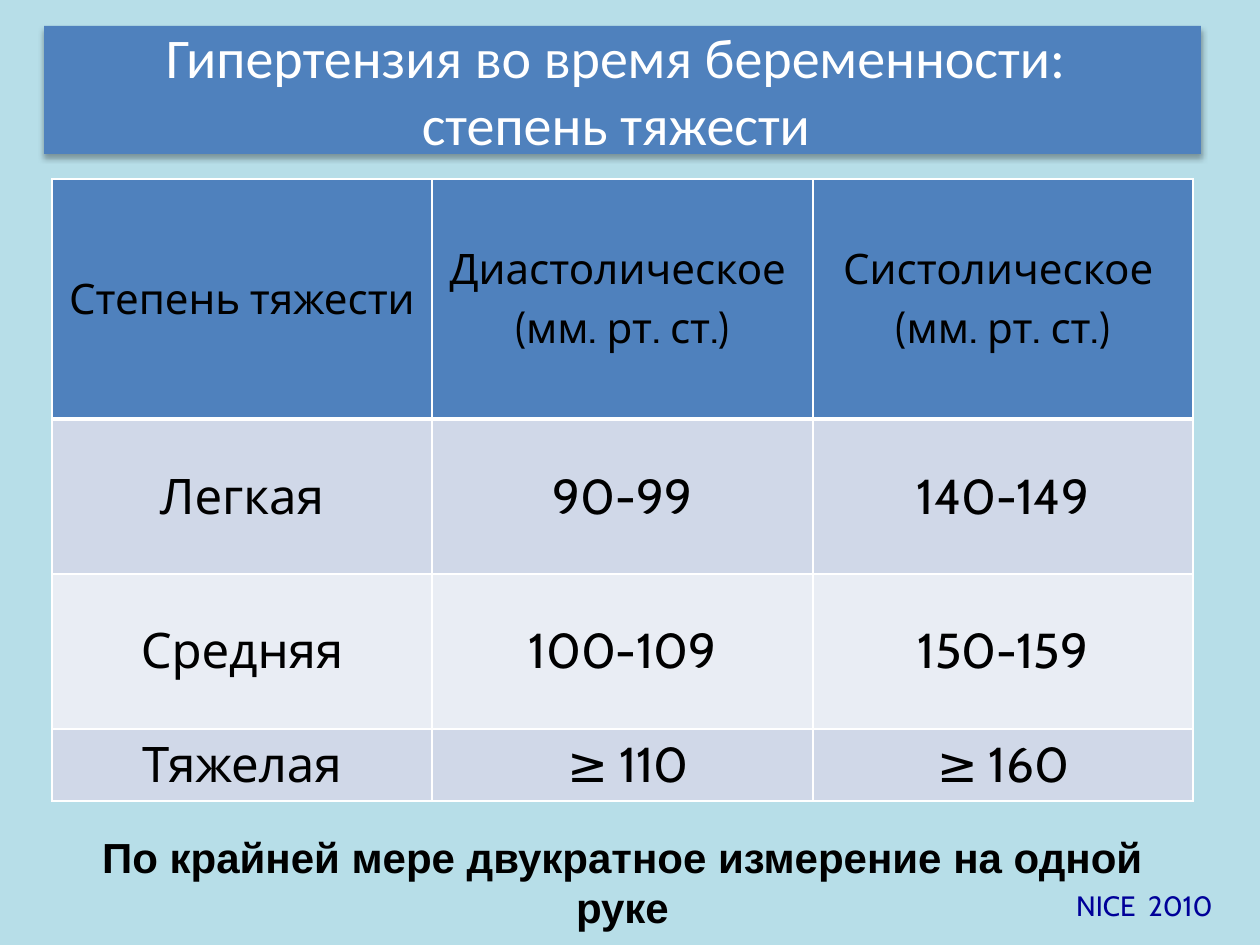
import pptx
import pptx.dml.color
import pptx.enum.text
import pptx.oxml
import pptx.oxml.ns
import pptx.util

EMU_PER_PX = 914400 / 126
ALIGN = pptx.enum.text.PP_ALIGN
ANCHOR = pptx.enum.text.MSO_ANCHOR
AUTO_SIZE = pptx.enum.text.MSO_AUTO_SIZE
NAMESPACE = pptx.oxml.ns.nsdecls("a")

BLUE, WHITE, BLACK, NAVY = "4F81BD", "FFFFFF", "000000", "000099"
SKY, BAND_DARK, BAND_LIGHT = "B7DEE8", "D0D8E8", "E9EDF4"

COLUMN_WIDTHS = [380, 381, 380]
ROW_HEIGHTS = [240, 155, 155, 72]
SEVERITY_ROWS = [
    ["Степень тяжести", "Диастолическое \n(мм. рт. ст.)", "Систолическое \n(мм. рт. ст.)"],
    ["Легкая", "90-99", "140-149"],
    ["Средняя", "100-109", "150-159"],
    ["Тяжелая", " ≥ 110", "≥ 160"],
]


def px(length):
    return pptx.util.Emu(round(length * EMU_PER_PX))


def rgb(colour):
    return pptx.dml.color.RGBColor.from_string(colour)


def fill_solid(fill, colour):
    fill.solid()
    fill.fore_color.rgb = rgb(colour)


class SeveritySlide:
    def __init__(self, presentation):
        self.slide = presentation.slides.add_slide(presentation.slide_layouts[5])
        fill_solid(self.slide.background.fill, SKY)

    def set_text(self, frame, text, size, font, colour, bold=False, align=ALIGN.CENTER):
        frame.text = text
        for paragraph in frame.paragraphs:
            paragraph.alignment = align
            for run in paragraph.runs:
                run.font.size = pptx.util.Pt(size)
                run.font.name = font
                run.font.bold = bold
                run.font.color.rgb = rgb(colour)

    def title(self, box, text):
        """Turn the title placeholder into a rounded, shadowed banner."""
        banner = self.slide.shapes.title
        banner.left, banner.top, banner.width, banner.height = map(px, box)
        properties = banner.element.spPr
        properties.append(pptx.oxml.parse_xml(
            f'<a:prstGeom {NAMESPACE} prst="roundRect"><a:avLst/></a:prstGeom>'))
        fill_solid(banner.fill, BLUE)
        banner.line.fill.background()
        properties.append(pptx.oxml.parse_xml(
            f'<a:effectLst {NAMESPACE}><a:outerShdw blurRad="44450" dist="27940" dir="5400000">'
            f'<a:srgbClr val="{BLACK}"><a:alpha val="32000"/></a:srgbClr>'
            '</a:outerShdw></a:effectLst>'))
        frame = banner.text_frame
        frame.auto_size = AUTO_SIZE.NONE
        frame.vertical_anchor = ANCHOR.MIDDLE
        self.set_text(frame, text, 32, "Calibri", WHITE)

    def text(self, box, text, size, font, colour, bold=False, align=ALIGN.CENTER, wrap=True):
        frame = self.slide.shapes.add_textbox(*map(px, box)).text_frame
        frame.word_wrap = wrap
        frame.auto_size = AUTO_SIZE.SHAPE_TO_FIT_TEXT
        self.set_text(frame, text, size, font, colour, bold, align)

    def table(self, left, top, rows):
        table = self.slide.shapes.add_table(
            len(rows), len(COLUMN_WIDTHS), px(left), px(top),
            px(sum(COLUMN_WIDTHS)), px(sum(ROW_HEIGHTS))).table
        for column, width in zip(table.columns, COLUMN_WIDTHS):
            column.width = px(width)
        for row, height in zip(table.rows, ROW_HEIGHTS):
            row.height = px(height)
        for row_index, labels in enumerate(rows):
            for column_index, label in enumerate(labels):
                self.cell(table.cell(row_index, column_index), label, row_index)

    def cell(self, cell, label, row_index):
        header = row_index == 0
        cell.vertical_anchor = ANCHOR.MIDDLE
        self.set_text(cell.text_frame, label, 24 if header else 28, "Cabin", BLACK)
        paragraphs = cell.text_frame.paragraphs
        for paragraph in paragraphs:
            properties = paragraph._p.get_or_add_pPr()
            properties.insert(0, pptx.oxml.parse_xml(
                f'<a:spcBef {NAMESPACE}><a:spcPct val="20000"/></a:spcBef>'))
            if len(paragraphs) > 1:
                properties.set("marL", "384048")
                properties.set("indent", "-384048")
        self.borders(cell, {"T": 3 if row_index == 1 else 1, "B": 3 if header else 1})
        fill_solid(cell.fill, BLUE if header else BAND_DARK if row_index % 2 else BAND_LIGHT)

    def borders(self, cell, widths):
        """Draw white borders, 1 pt wide on every side not given in widths."""
        for side in "LRTB":
            width = pptx.util.Pt(widths.get(side, 1))
            cell._tc.get_or_add_tcPr().append(pptx.oxml.parse_xml(
                f'<a:ln{side} {NAMESPACE} w="{width}"><a:solidFill>'
                f'<a:srgbClr val="{WHITE}"/></a:solidFill></a:ln{side}>'))


def main():
    presentation = pptx.Presentation()
    presentation.slide_width, presentation.slide_height = px(1260), px(945)
    severity = SeveritySlide(presentation)
    severity.title((44, 26, 1157, 128),
                   "Гипертензия во время беременности: \nстепень тяжести ")
    severity.table(52, 179, SEVERITY_ROWS)
    severity.text((44, 825, 1157, 115), "По крайней мере двукратное измерение на одной руке",
                  24, "Arial", BLACK, bold=True)
    severity.text((1057, 882, 168, 47), "NICE  2010", 16, "Cabin", NAVY,
                  align=ALIGN.RIGHT, wrap=False)
    presentation.save("out.pptx")


if __name__ == "__main__":
    main()
